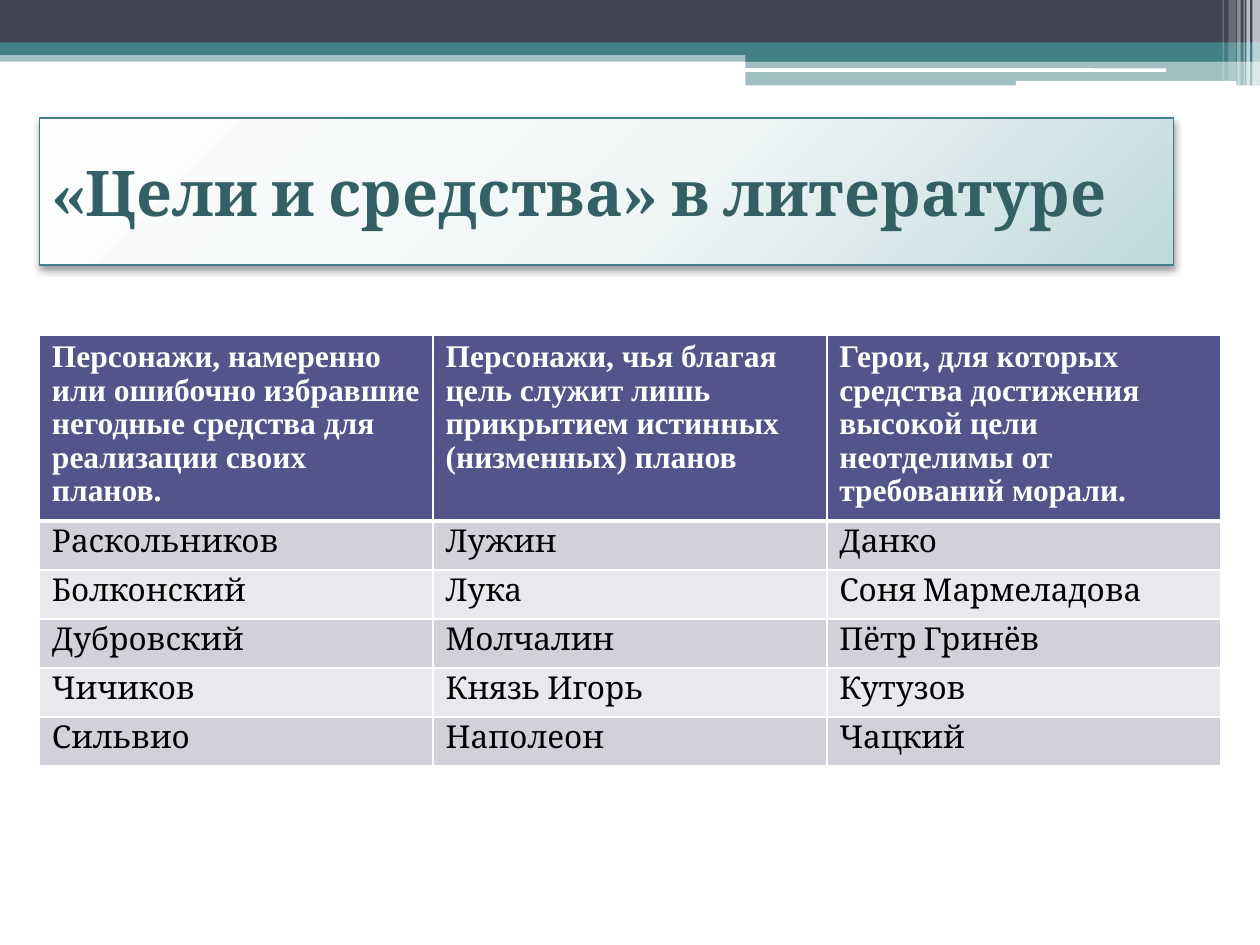
from lxml import etree
from pptx import Presentation
from pptx.dml.color import RGBColor
from pptx.enum.shapes import MSO_SHAPE
from pptx.enum.text import MSO_ANCHOR, PP_ALIGN
from pptx.oxml import parse_xml
from pptx.oxml.ns import qn
from pptx.util import Pt

RECT, ROUND = MSO_SHAPE.RECTANGLE, MSO_SHAPE.ROUNDED_RECTANGLE
MIDDLE, LEFT = MSO_ANCHOR.MIDDLE, PP_ALIGN.LEFT
NS = 'xmlns:a="http://schemas.openxmlformats.org/drawingml/2006/main"'
TEAL, SLATE, WHITE = "438086", "424456", "FFFFFF"
TITLE_FILL = [(0, "FEFEFE"), (55, "F0F6F6"), (100, "BFD9DD")]
TITLE_FONT = {"name": "Cambria", "size": Pt(36), "bold": True}
HEAD_FONT = {"name": "Times New Roman", "size": Pt(18), "bold": True}
BODY_FONT = {"name": "Cambria", "size": Pt(18), "bold": False}


def rgb(value):
    return RGBColor.from_string(value)


class Deck:
    def __init__(self, width, height):
        self.prs = Presentation()
        self.prs.slide_width, self.prs.slide_height = Pt(width), Pt(height)
        self.s = self.prs.slides.add_slide(self.prs.slide_layouts[5])

    def add_text(self, tf, text, font, color, spacing=1.0):
        p = tf.paragraphs[0]
        p.alignment, p.line_spacing = LEFT, spacing
        r = p.add_run()
        r.text = text
        for key, value in font.items():
            setattr(r.font, key, value)
        r.font.color.rgb = rgb(color)

    def bar(self, x, y, w, h, color, alpha=100, kind=RECT):
        sp = self.s.shapes.add_shape(kind, Pt(x), Pt(y), Pt(w), Pt(h))
        sp.shadow.inherit = False
        sp.line.fill.background()
        sp.fill.solid()
        sp.fill.fore_color.rgb = rgb(color)
        if alpha < 100:
            clr = sp._element.spPr.find(qn("a:solidFill"))[0]
            etree.SubElement(clr, qn("a:alpha"), val=str(alpha * 1000))

    def title(self, text, x, y, w, h):
        sp = self.s.shapes.title
        sp.left, sp.top, sp.width, sp.height = Pt(x), Pt(y), Pt(w), Pt(h)
        # Radial gradient centred beyond the top left corner
        stops = "".join(f'<a:gs pos="{pos * 1000}"><a:srgbClr val="{c}"/></a:gs>'
                        for pos, c in TITLE_FILL)
        sp._element.spPr.append(parse_xml(
            f'<a:gradFill {NS}><a:gsLst>{stops}</a:gsLst><a:path path="circle">'
            '<a:fillToRect l="-40000" t="-90000" r="140000" b="190000"/>'
            '</a:path></a:gradFill>'))
        sp.line.color.rgb, sp.line.width = rgb(TEAL), Pt(0.75)
        sp._element.spPr.append(parse_xml(
            f'<a:effectLst {NS}><a:outerShdw blurRad="{Pt(4.1)}" dist="{Pt(2)}" '
            'dir="5400000" rotWithShape="0"><a:srgbClr val="000000">'
            '<a:alpha val="40000"/></a:srgbClr></a:outerShdw></a:effectLst>'))
        tf = sp.text_frame
        tf.word_wrap, tf.vertical_anchor = True, MIDDLE
        self.add_text(tf, text, TITLE_FONT, "326065")

    def borders(self, cell, **widths):
        tcPr = cell._tc.get_or_add_tcPr()
        for side in "LRTB":
            tcPr.append(parse_xml(
                f'<a:ln{side} {NS} w="{Pt(widths.get(side, 1))}"><a:solidFill>'
                f'<a:srgbClr val="{WHITE}"/></a:solidFill></a:ln{side}>'))

    def table(self, rows, x, y, w, head_h, row_h):
        heights = [head_h] + [row_h] * (len(rows) - 1)
        table = self.s.shapes.add_table(len(rows), len(rows[0]), Pt(x), Pt(y),
                                        Pt(w), Pt(sum(heights))).table
        for i, (row, height) in enumerate(zip(rows, heights)):
            table.rows[i].height = Pt(height)
            for j, text in enumerate(row):
                cell = table.cell(i, j)
                self.borders(cell, T=3 if i == 1 else 1, B=3 if i == 0 else 1)
                cell.fill.solid()
                if i == 0:
                    fill = "53548A"
                    self.add_text(cell.text_frame, text, HEAD_FONT, WHITE, 0.96)
                else:
                    fill = "D1D1DA" if i % 2 else "E9E9ED"
                    self.add_text(cell.text_frame, text, BODY_FONT, "000000", 0.85)
                cell.fill.fore_color.rgb = rgb(fill)


def main():
    deck = Deck(720, 540)

    # Header bands
    deck.bar(0, 28.8, 720, 6.5, TEAL, 50)
    deck.bar(0, 0, 720, 24.5, SLATE)
    deck.bar(0, 24.2, 720, 7.2, TEAL)
    deck.bar(426, 28, 294, 7.2, TEAL)
    deck.bar(426, 34.8, 294, 14, TEAL, 50)
    deck.bar(425.5, 39, 241, 2, WHITE, kind=ROUND)
    deck.bar(580.5, 46.2, 126, 2.8, WHITE, kind=ROUND)

    # Translucent stripes at the right edge: left, width, height, opacity
    for x, w, h, alpha in [(715.7, 4.3, 49, 65), (712.2, 2, 49, 65),
                           (710.6, 0.7, 49, 60), (707, 2, 49, 40),
                           (702, 4.3, 46, 20), (698.6, 0.7, 46, 30)]:
        deck.bar(x, 0, w, h, WHITE, alpha)

    deck.title("«Цели и средства» в литературе", 22.5, 67.5, 648, 84)

    deck.table([
        ("Персонажи, намеренно или ошибочно избравшие негодные средства "
         "для реализации своих планов.",
         "Персонажи, чья благая цель служит лишь прикрытием истинных "
         "(низменных) планов",
         "Герои, для которых средства достижения высокой цели неотделимы "
         "от требований морали."),
        ("Раскольников", "Лужин", "Данко"),
        ("Болконский", "Лука", "Соня Мармеладова"),
        ("Дубровский", "Молчалин", "Пётр Гринёв"),
        ("Чичиков", "Князь Игорь", "Кутузов"),
        ("Сильвио", "Наполеон", "Чацкий"),
    ], 22.5, 191.3, 675, 106.5, 28)

    deck.prs.save("out.pptx")


if __name__ == "__main__":
    main()
